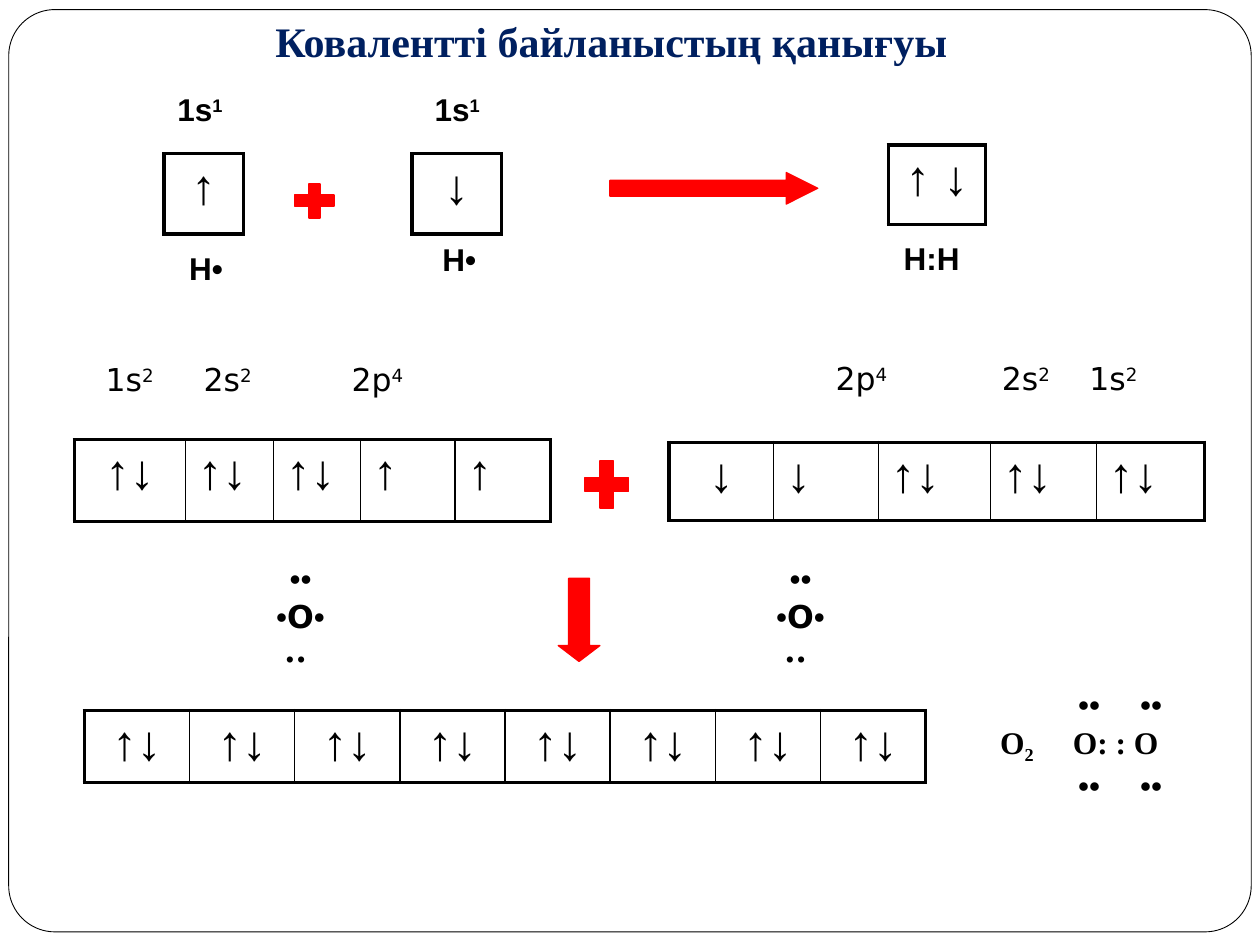
from lxml import etree
from pptx import Presentation
from pptx.dml.color import RGBColor
from pptx.enum.shapes import MSO_SHAPE
from pptx.enum.text import MSO_ANCHOR, MSO_AUTO_SIZE, PP_ALIGN
from pptx.oxml.ns import qn
from pptx.util import Pt

LEFT, CENTER = PP_ALIGN.LEFT, PP_ALIGN.CENTER
TOP, MIDDLE = MSO_ANCHOR.TOP, MSO_ANCHOR.MIDDLE
ARIAL, DEJAVU, TIMES = "Arial", "DejaVu Sans", "Times New Roman"
COLORS = {"ink": "000000", "paper": "FFFFFF", "red": "FF0000", "title": "002060"}
RGB = {name: RGBColor.from_string(value) for name, value in COLORS.items()}
SUP, SUB = 30, -25

prs = Presentation()
prs.slide_width, prs.slide_height = Pt(720), Pt(540)
s = prs.slides.add_slide(prs.slide_layouts[5])


def add_text(x, y, w, h, paras, font, bold=True, align=CENTER, tabs=(), anchor=TOP):
    tf = s.shapes.add_textbox(Pt(x), Pt(y), Pt(w), Pt(h)).text_frame
    tf.word_wrap = True
    tf.vertical_anchor = anchor
    for i, runs in enumerate(paras):
        p = tf.add_paragraph() if i else tf.paragraphs[0]
        p.alignment = align
        if tabs:
            tab_list = etree.SubElement(p._p.get_or_add_pPr(), qn("a:tabLst"))
            for stop in tabs[i]:
                etree.SubElement(tab_list, qn("a:tab"), pos=str(Pt(stop)), algn="l")
        for text, opts in runs:
            r = p.add_run()
            r.text = text
            r.font.name = opts.get("font", font)
            r.font.size = Pt(opts.get("size", 18))
            r.font.bold = opts.get("bold", bold)
            r.font.color.rgb = RGB["ink"]
            if "base" in opts:
                r._r.get_or_add_rPr().set("baseline", str(opts["base"] * 1000))


def add_orbitals(x, y, widths, h, arrows, font, centered):
    frame = s.shapes.add_table(1, len(widths), Pt(x), Pt(y), Pt(sum(widths)), Pt(h))
    table = frame.table
    table.first_row = table.horz_banding = False
    table.rows[0].height = Pt(h)
    last = len(widths) - 1
    for i, (width, arrow) in enumerate(zip(widths, arrows)):
        table.columns[i].width = Pt(width)
        cell = table.cell(0, i)
        cell.text_frame.text = arrow
        p = cell.text_frame.paragraphs[0]
        p.alignment = CENTER if i < centered else LEFT
        f = p.runs[0].font
        f.name, f.size, f.bold = font, Pt(28), True
        f.color.rgb = RGB["ink"]
        sides = {"lnL": 1 if i else 2.25, "lnR": 1 if i < last else 2.25,
                 "lnT": 2.25, "lnB": 2.25}
        for side, weight in sides.items():
            ln = etree.SubElement(cell._tc.get_or_add_tcPr(), qn("a:" + side), w=str(Pt(weight)))
            fill = etree.SubElement(ln, qn("a:solidFill"))
            etree.SubElement(fill, qn("a:srgbClr"), val=COLORS["ink"])
        cell.fill.background()


frame = s.shapes.add_shape(MSO_SHAPE.ROUNDED_RECTANGLE, Pt(5), Pt(5.5), Pt(710), Pt(527))
frame.adjustments[0] = 0.05
frame.shadow.inherit = False
frame.fill.solid()
frame.fill.fore_color.rgb = RGB["paper"]
frame.line.color.rgb = RGB["ink"]
frame.line.width = Pt(0.5)
s.shapes._spTree.insert(2, frame._element)

title = s.shapes.title
title.left, title.top, title.width, title.height = Pt(59.8), Pt(5), Pt(579), Pt(36)
tf = title.text_frame
tf.text = "Ковалентті байланыстың қанығуы"
tf.auto_size = MSO_AUTO_SIZE.NONE
tf.vertical_anchor = TOP
p = tf.paragraphs[0]
p.alignment = CENTER
f = p.runs[0].font
f.name, f.size, f.bold = TIMES, Pt(24), True
f.color.rgb = RGB["title"]

for x, y, widths, h, arrows, font, centered in [
    (93.6, 87.84, [45.4], 46, ["↑"], ARIAL, 1),
    (235.4, 87.84, [51.1], 46, ["↓"], ARIAL, 1),
    (507.6, 82.8, [55.4], 45.4, ["↑ ↓"], ARIAL, 1),
    (42.5, 251.3, [63.4, 50.4, 49.7, 54, 54.7], 46.8,
     ["↑↓", "↑↓", "↑↓", "↑", "↑"], TIMES, 1),
    (382.3, 252.7, [59.8, 59.8, 64.1, 60.5, 61.9], 44.6,
     ["↓", "↓", "↑↓", "↑↓", "↑↓"], TIMES, 1),
    (48.2, 406, [60.1] * 8, 41, ["↑↓"] * 8, TIMES, 8),
]:
    add_orbitals(x, y, widths, h, arrows, font, centered)

for kind, x, y, w, h, adjustments, weight in [
    (MSO_SHAPE.RIGHT_ARROW, 348.5, 98.6, 118.8, 18, [0.5, 1], 0.75),
    (MSO_SHAPE.DOWN_ARROW, 319, 330.5, 23.8, 47.5, [0.5, 0.38], 0.75),
    (MSO_SHAPE.MATH_PLUS, 164.2, 101.5, 31, 26.6, [], 1),
    (MSO_SHAPE.MATH_PLUS, 329.8, 258.5, 33.8, 36.7, [], 1),
]:
    sp = s.shapes.add_shape(kind, Pt(x), Pt(y), Pt(w), Pt(h))
    for i, value in enumerate(adjustments):
        sp.adjustments[i] = value
    sp.shadow.inherit = False
    sp.fill.solid()
    sp.fill.fore_color.rgb = RGB["red"]
    sp.line.color.rgb = RGB["red"]
    sp.line.width = Pt(weight)

for x in (94.3, 241.2):
    add_text(x, 48.2, 44.6, 28.8, [[("1s", {}), ("1", {"base": SUP})]], ARIAL, align=LEFT)

for x, y, w, label in [(87.8, 139, 59.8, "H•"), (238.3, 133.9, 48.2, "H•"),
                       (490.3, 133.2, 84.2, "H:H")]:
    add_text(x, y, w, 28.8, [[(label, {})]], ARIAL)

sup = {"base": SUP}
add_text(53.3, 202.3, 244, 28.8,
         [[("1s", {}), ("2", sup), ("\t2s", {}), ("2", sup), ("\t2p", {}), ("4", sup)]],
         DEJAVU, bold=False, align=LEFT, tabs=[(56, 140.5)])
add_text(405.4, 201.6, 278, 28.8,
         [[("\t2p", {}), ("4", sup), ("\t2s", {}), ("2", sup), ("\t1s", {}), ("2", sup)]],
         DEJAVU, bold=False, align=LEFT, tabs=[(65, 160, 210)])

oxygen = [
    [("••", {})],
    [("•", {}), ("O", {"font": DEJAVU}), ("•", {})],
    [("••", {"font": DEJAVU, "size": 10}), (" ", {"font": DEJAVU, "bold": False})],
]
for x, w in [(150.5, 42.5), (433.4, 48.2)]:
    add_text(x, 315.4, w, 72.7, oxygen, TIMES, anchor=MIDDLE)

pairs = [("\t••\t••", {})]
pair_tabs = (44.5, 80)
add_text(564.5, 388.8, 113, 72.7,
         [pairs, [("О", {}), ("2", {"base": SUB}), ("\tO: : O", {})], pairs],
         TIMES, align=LEFT, tabs=[pair_tabs, (41.5,), pair_tabs], anchor=MIDDLE)

prs.save("out.pptx")
